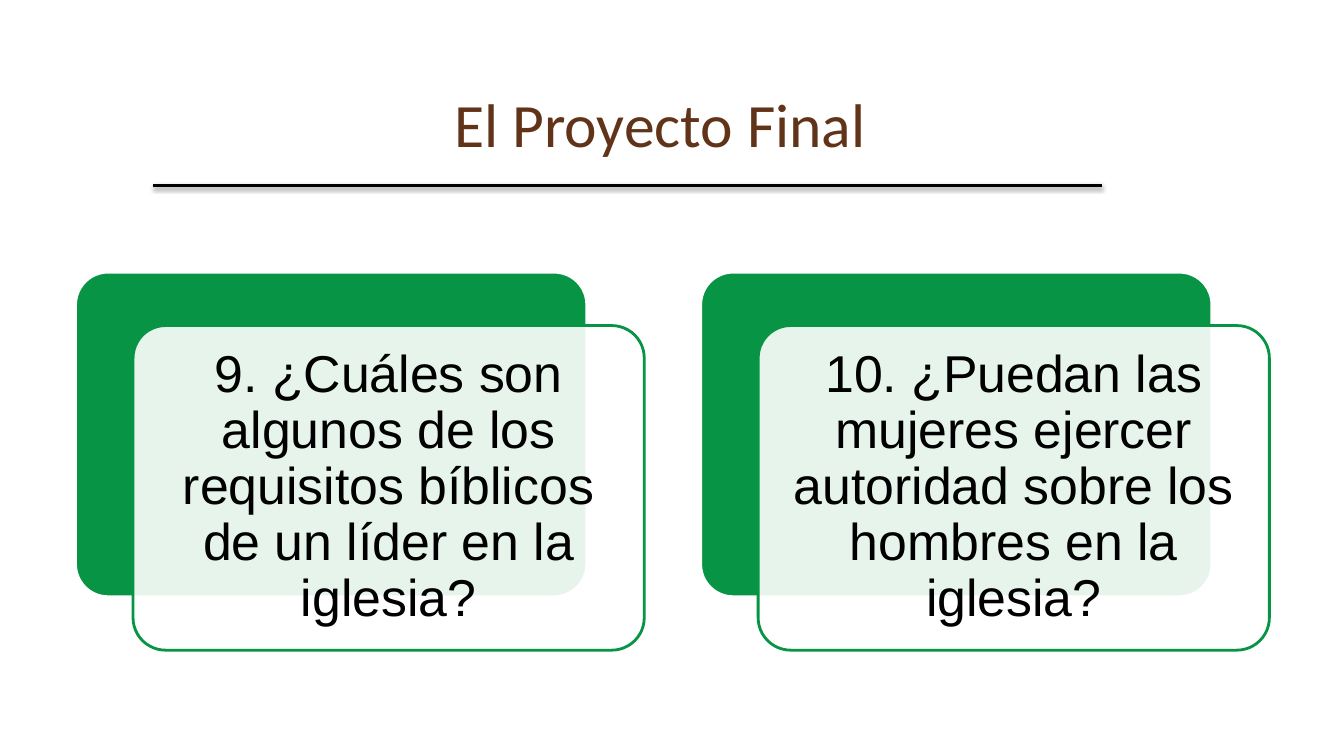
from lxml import etree
from pptx import Presentation
from pptx.dml.color import RGBColor
from pptx.enum.shapes import MSO_CONNECTOR, MSO_SHAPE
from pptx.enum.text import MSO_ANCHOR, PP_ALIGN
from pptx.oxml import parse_xml
from pptx.oxml.ns import nsdecls, qn
from pptx.util import Inches, Pt

COLORS = {"brown": "613318", "green": "079444", "white": "FFFFFF", "black": "000000"}
QUESTIONS = [
    "9. ¿Cuáles son algunos de los requisitos bíblicos de un líder en la iglesia?",
    "10. ¿Puedan las mujeres ejercer autoridad sobre los hombres en la iglesia?",
]
CARD_WIDTH, CARD_HEIGHT = 5.07, 3.22
CARD_LEFT, CARD_TOP, CARD_STEP = 0.75, 2.7, 6.2


def color(name):
    return RGBColor.from_string(COLORS[name])


def add_text(slide, left, top, width, height, text, font, size, ink,
             inset=(0.1, 0.05), anchor=MSO_ANCHOR.TOP, spacing=1.0):
    """Add a centred, wrapping text box; inset is (sides, top and bottom)."""
    box = slide.shapes.add_textbox(Inches(left), Inches(top), Inches(width), Inches(height))
    frame = box.text_frame
    frame.word_wrap = True
    frame.vertical_anchor = anchor
    frame.margin_left = frame.margin_right = Inches(inset[0])
    frame.margin_top = frame.margin_bottom = Inches(inset[1])
    para = frame.paragraphs[0]
    para.alignment = PP_ALIGN.CENTER
    para.line_spacing = spacing
    span = para.add_run()
    span.text = text
    span.font.name = font
    span.font.size = Pt(size)
    span.font.color.rgb = color(ink)


def add_panel(slide, left, top, fill, line):
    panel = slide.shapes.add_shape(MSO_SHAPE.ROUNDED_RECTANGLE, Inches(left), Inches(top),
                                   Inches(CARD_WIDTH), Inches(CARD_HEIGHT))
    panel.shadow.inherit = False
    panel.adjustments[0] = 0.1
    panel.fill.solid()
    panel.fill.fore_color.rgb = color(fill)
    panel.line.color.rgb = color(line)
    panel.line.width = Pt(2)
    return panel


def add_title(slide, left, top, width, height):
    """Title with a shadowed rule under it."""
    add_text(slide, left, top, width, height, "El Proyecto Final", "Calibri", 44, "brown")
    rule_left, rule_top = left + 0.77, top + 1.04
    rule = slide.shapes.add_connector(MSO_CONNECTOR.STRAIGHT, Inches(rule_left), Inches(rule_top),
                                      Inches(rule_left + 9.41), Inches(rule_top))
    rule.line.color.rgb = color("black")
    rule.line.width = Pt(2)
    rule.element.spPr.append(parse_xml(
        f'<a:effectLst {nsdecls("a")}><a:outerShdw blurRad="{Pt(3.1)}" dist="{Pt(1.6)}" '
        f'dir="5400000" rotWithShape="0"><a:srgbClr val="{COLORS["black"]}">'
        '<a:alpha val="38000"/></a:srgbClr></a:outerShdw></a:effectLst>'))


def add_question_card(slide, left, top, question):
    """Green panel with a translucent white panel offset over it, holding the question."""
    add_panel(slide, left, top, "green", "white")
    front_left, front_top = left + 0.57, top + 0.53
    front = add_panel(slide, front_left, front_top, "white", "green")
    fill_color = front.element.spPr.find(qn("a:solidFill")).find(qn("a:srgbClr"))
    etree.SubElement(fill_color, qn("a:alpha")).set("val", "90000")
    pad = 0.09
    add_text(slide, front_left + pad, front_top + pad, CARD_WIDTH - 2 * pad,
             CARD_HEIGHT - 2 * pad, question, "Arial", 37, "black",
             inset=(0.15, 0.15), anchor=MSO_ANCHOR.MIDDLE, spacing=0.9)


def main():
    deck = Presentation()
    deck.slide_width, deck.slide_height = Inches(13.33), Inches(7.5)
    page = deck.slides.add_slide(deck.slide_layouts[6])
    add_title(page, 0.75, 0.8, 11.6, 2.54)
    for index, question in enumerate(QUESTIONS):
        add_question_card(page, CARD_LEFT + index * CARD_STEP, CARD_TOP, question)
    deck.save("out.pptx")


if __name__ == "__main__":
    main()
